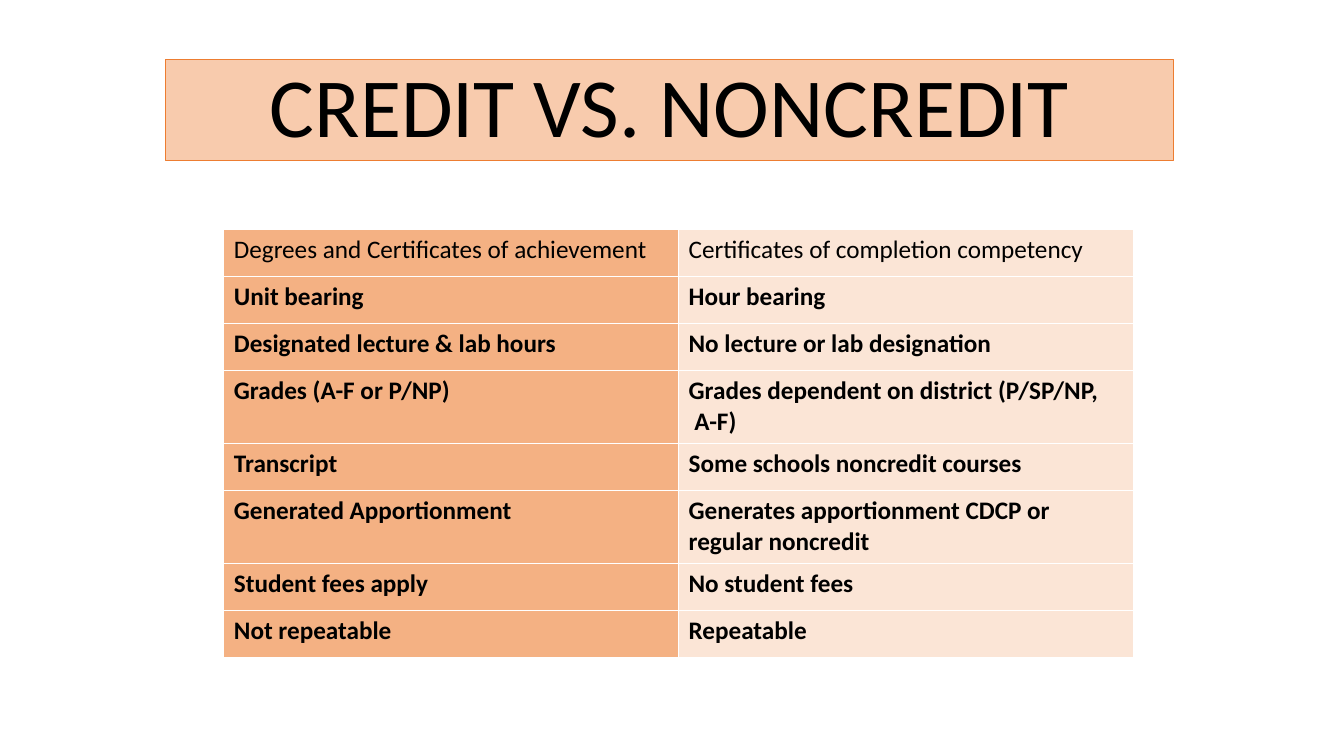
from dataclasses import dataclass

from lxml.etree import SubElement
from pptx import Presentation
from pptx.dml.color import RGBColor
from pptx.enum.text import MSO_ANCHOR, MSO_AUTO_SIZE, PP_ALIGN
from pptx.oxml.ns import qn
from pptx.util import Inches, Pt


@dataclass(frozen=True)
class Theme:
    font: str = "Calibri"
    text: RGBColor = RGBColor(0x00, 0x00, 0x00)
    title_fill: RGBColor = RGBColor(0xF8, 0xCB, 0xAD)
    title_line: RGBColor = RGBColor(0xED, 0x7D, 0x31)
    column_fills: tuple = (RGBColor(0xF4, 0xB1, 0x83), RGBColor(0xFB, 0xE5, 0xD6))
    grid: RGBColor = RGBColor(0xFF, 0xFF, 0xFF)
    title_size: Pt = Pt(60)
    table_size: Pt = Pt(18)


THEME = Theme()

COMPARISON = [
    ("Degrees and Certificates of achievement", "Certificates of completion competency"),
    ("Unit bearing", "Hour bearing"),
    ("Designated lecture & lab hours", "No lecture or lab designation"),
    ("Grades (A-F or P/NP)", "Grades dependent on district (P/SP/NP,\n A-F)"),
    ("Transcript", "Some schools noncredit courses"),
    ("Generated Apportionment", "Generates apportionment CDCP or regular noncredit"),
    ("Student fees apply", "No student fees"),
    ("Not repeatable", "Repeatable"),
]
ROW_HEIGHTS = [0.46, 0.47, 0.47, 0.72, 0.47, 0.72, 0.47, 0.47]


def style_font(font, size, bold=False):
    font.name = THEME.font
    font.size = size
    font.bold = bold
    font.color.rgb = THEME.text


def add_title(slide, left, top, width, height):
    title = slide.shapes.title
    title.left, title.top = Inches(left), Inches(top)
    title.width, title.height = Inches(width), Inches(height)
    title.fill.solid()
    title.fill.fore_color.rgb = THEME.title_fill
    title.line.color.rgb = THEME.title_line
    title.line.width = Pt(0.5)

    frame = title.text_frame
    frame.text = "CREDIT VS. NONCREDIT"
    frame.auto_size = MSO_AUTO_SIZE.NONE
    frame.vertical_anchor = MSO_ANCHOR.BOTTOM
    heading = frame.paragraphs[0]
    heading.alignment = PP_ALIGN.CENTER
    heading.line_spacing = 0.9
    style_font(heading.font, THEME.title_size)


def set_borders(cell):
    properties = cell._tc.get_or_add_tcPr()
    for side in ("a:lnL", "a:lnR", "a:lnT", "a:lnB"):
        border = SubElement(properties, qn(side), w=str(Pt(1)))
        solid = SubElement(border, qn("a:solidFill"))
        SubElement(solid, qn("a:srgbClr"), val=str(THEME.grid))


def add_comparison(slide, left, top, width):
    columns = len(THEME.column_fills)
    table = slide.shapes.add_table(
        len(COMPARISON), columns, Inches(left), Inches(top),
        Inches(width), Inches(sum(ROW_HEIGHTS)),
    ).table
    table.first_row = table.horz_banding = False

    for row, (entries, height) in enumerate(zip(COMPARISON, ROW_HEIGHTS)):
        table.rows[row].height = Inches(height)
        for column, (entry, fill) in enumerate(zip(entries, THEME.column_fills)):
            cell = table.cell(row, column)
            set_borders(cell)
            cell.fill.solid()
            cell.fill.fore_color.rgb = fill
            cell.text = entry
            for paragraph in cell.text_frame.paragraphs:
                style_font(paragraph.font, THEME.table_size, bold=row > 0)


def main():
    deck = Presentation()
    deck.slide_width, deck.slide_height = Inches(13.33), Inches(7.5)
    slide = deck.slides.add_slide(deck.slide_layouts.get_by_name("Title Only"))
    add_title(slide, 1.64, 0.59, 10, 1)
    add_comparison(slide, 2.22, 2.28, 9.02)
    deck.save("out.pptx")


if __name__ == "__main__":
    main()
